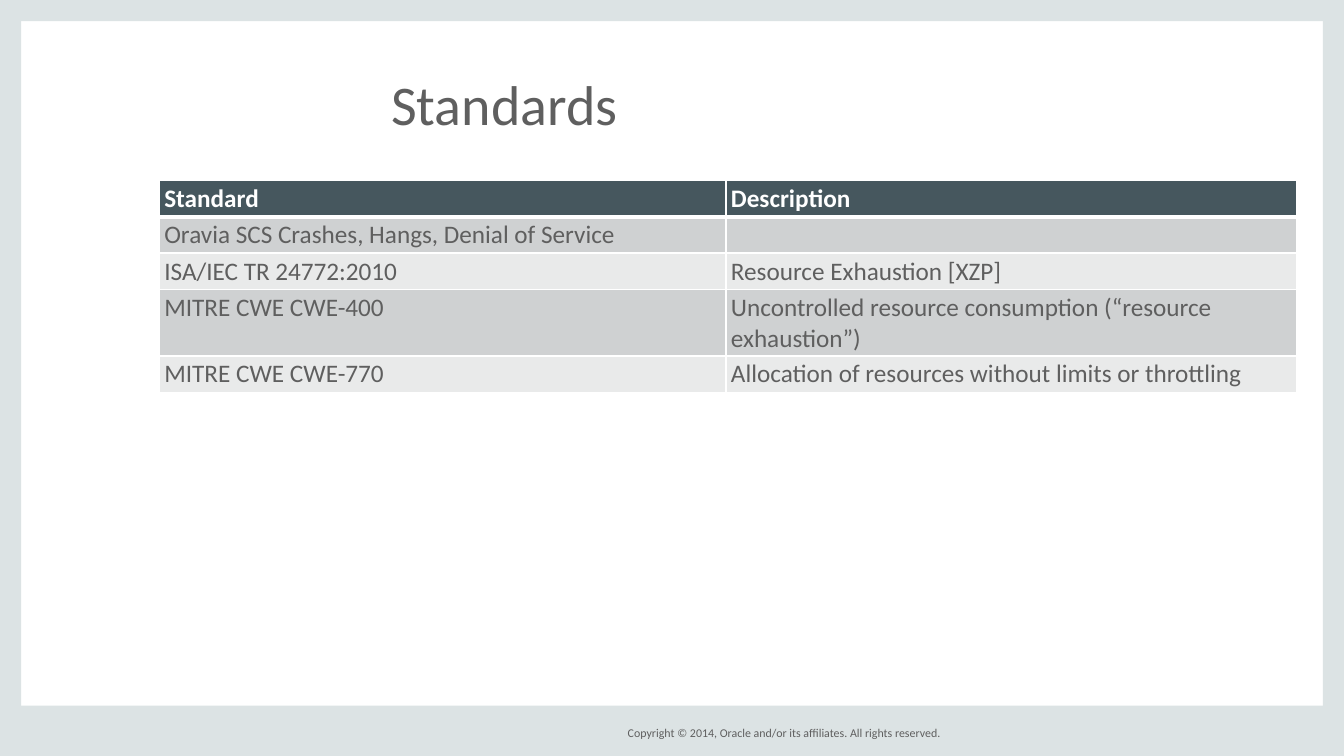
"""Build the Standards slide: a framed page with a title, a table and a footer."""
from lxml import etree
from pptx import Presentation
from pptx.dml.color import RGBColor
from pptx.enum.shapes import MSO_SHAPE
from pptx.enum.text import MSO_ANCHOR, PP_ALIGN
from pptx.oxml.ns import qn
from pptx.util import Inches, Pt

RECTANGLE = MSO_SHAPE.RECTANGLE
TOP, MIDDLE = MSO_ANCHOR.TOP, MSO_ANCHOR.MIDDLE
LEFT, RIGHT = PP_ALIGN.LEFT, PP_ALIGN.RIGHT
COLORS = {
    "frame": "DCE3E4",
    "text": "5F5F5F",
    "white": "FFFFFF",
    "header": "46575E",
    "odd": "CFD1D2",
    "even": "E9EAEA",
}
WIDTH, HEIGHT = 13.33, 7.5
EDGE, FOOT = 0.21, 0.5


def write(frame, text, size=18, color="text", bold=False, align=LEFT):
    paragraph = frame.paragraphs[0]
    paragraph.alignment = align
    run = paragraph.add_run()
    run.text = text
    run.font.name = "Calibri"
    run.font.size = Pt(size)
    run.font.bold = bold
    run.font.color.rgb = RGBColor.from_string(COLORS[color])


def add_border(cell, side, points):
    line = etree.SubElement(cell._tc.get_or_add_tcPr(), qn(f"a:ln{side}"), w=str(Pt(points)))
    fill = etree.SubElement(line, qn("a:solidFill"))
    etree.SubElement(fill, qn("a:srgbClr"), val=COLORS["white"])


deck = Presentation()
deck.slide_width, deck.slide_height = Inches(WIDTH), Inches(HEIGHT)
slide = deck.slides.add_slide(deck.slide_layouts[5])

bands = [
    (0, 0, EDGE, HEIGHT),
    (WIDTH - EDGE, 0, EDGE, HEIGHT),
    (0, HEIGHT - FOOT, WIDTH, FOOT),
    (0, 0, WIDTH, EDGE),
]
for bounds in bands:
    band = slide.shapes.add_shape(RECTANGLE, *map(Inches, bounds))
    band.shadow.inherit = False
    band.fill.solid()
    band.fill.fore_color.rgb = RGBColor.from_string(COLORS["frame"])
    band.line.fill.background()

footer = slide.shapes.add_textbox(*map(Inches, (5.83, 7.17, 3.5, 0.2))).text_frame
footer.margin_left = footer.margin_right = footer.margin_top = footer.margin_bottom = 0
footer.vertical_anchor = MIDDLE
footer.word_wrap = True
write(footer, "Copyright © 2014, Oracle and/or its affiliates. All rights reserved.", size=8.5, align=RIGHT)

title = slide.shapes.title
title.left, title.top, title.width, title.height = map(Inches, (3.83, 0.67, 4.62, 0.72))
heading = title.text_frame
heading.margin_left = heading.margin_right = Inches(0.05)
heading.margin_top = heading.margin_bottom = Inches(0.02)
heading.vertical_anchor = TOP
write(heading, "Standards", size=40)

standards = [
    ("Standard", "Description"),
    ("Oravia SCS Crashes, Hangs, Denial of Service", ""),
    ("ISA/IEC TR 24772:2010", "Resource Exhaustion [XZP]"),
    ("MITRE CWE CWE-400", "Uncontrolled resource consumption (“resource exhaustion”)"),
    ("MITRE CWE CWE-770", "Allocation of resources without limits or throttling"),
]
column_widths = (5.62, 5.66)
row_heights = (0.35, 0.35, 0.35, 0.65, 0.35)
table = slide.shapes.add_table(
    len(standards), len(column_widths),
    Inches(1.58), Inches(1.79), Inches(sum(column_widths)), Inches(sum(row_heights)),
).table
for column, width in zip(table.columns, column_widths):
    column.width = Inches(width)
for row, height in zip(table.rows, row_heights):
    row.height = Inches(height)

for r, entries in enumerate(standards):
    is_header = r == 0
    shade = "header" if is_header else "odd" if r % 2 else "even"
    for c, entry in enumerate(entries):
        cell = table.cell(r, c)
        cell.margin_left = cell.margin_right = Inches(0.05)
        cell.margin_top = cell.margin_bottom = Inches(0.03)
        for side in "LRTB":
            under_header = (r, side) in ((0, "B"), (1, "T"))
            add_border(cell, side, 3 if under_header else 1)
        cell.fill.solid()
        cell.fill.fore_color.rgb = RGBColor.from_string(COLORS[shade])
        if entry:
            write(cell.text_frame, entry, color="white" if is_header else "text", bold=is_header)

deck.save("out.pptx")
